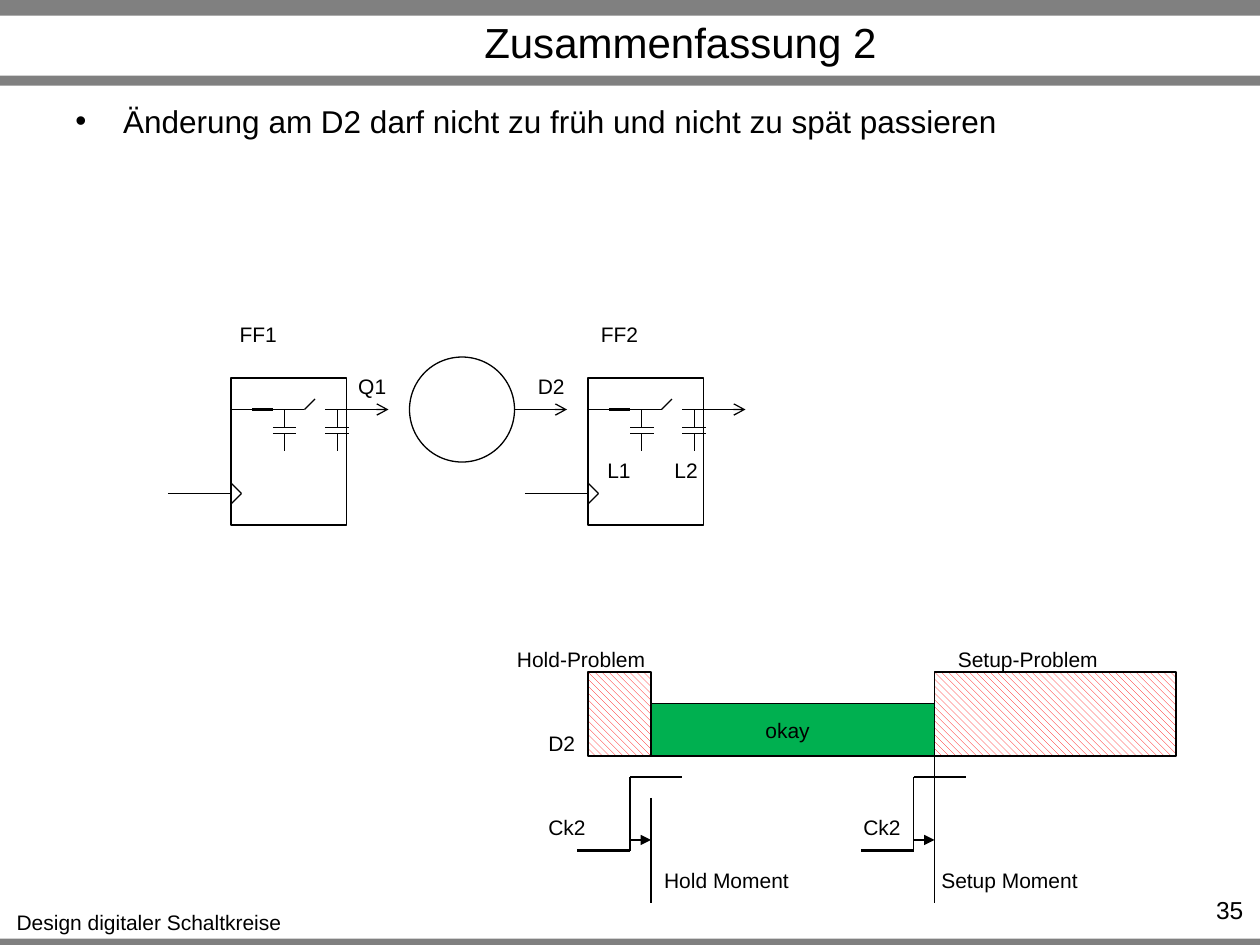
from dataclasses import dataclass
from typing import Optional

import pptx
import pptx.dml.color
import pptx.enum.dml
import pptx.enum.shapes
import pptx.enum.text
import pptx.oxml.ns
import pptx.util
from lxml import etree

RGBColor = pptx.dml.color.RGBColor
Shape = pptx.enum.shapes.MSO_SHAPE
Align = pptx.enum.text.PP_ALIGN
Anchor = pptx.enum.text.MSO_ANCHOR
qn = pptx.oxml.ns.qn

BLACK = RGBColor(0x00, 0x00, 0x00)
WHITE = RGBColor(0xFF, 0xFF, 0xFF)
GREY = RGBColor(0x80, 0x80, 0x80)
GREEN = RGBColor(0x00, 0xB0, 0x50)
RED = RGBColor(0xFF, 0x00, 0x00)
THIN, THICK = 0.75, 2

prs = pptx.Presentation()
prs.slide_width = pptx.util.Inches(10)
prs.slide_height = pptx.util.Inches(7.5)
s = prs.slides.add_slide(prs.slide_layouts[6])

# The slide is a grid of 120 columns by 90 rows with square cells
CELL = prs.slide_width / 120


@dataclass
class Box:
    col: float
    row: float
    cols: float
    rows: float

    def emu(self) -> list[int]:
        return [round(v * CELL) for v in (self.col, self.row, self.cols, self.rows)]


@dataclass
class Label:
    text: str
    col: float
    row: float
    cols: float


def add_line(x1: float, y1: float, x2: float, y2: float,
             width: float = THIN, head: Optional[str] = None) -> None:
    ends = [round(v * CELL) for v in (x1, y1, x2, y2)]
    c = s.shapes.add_connector(pptx.enum.shapes.MSO_CONNECTOR.STRAIGHT, *ends)
    c.line.color.rgb = BLACK
    c.line.width = pptx.util.Pt(width)
    if head:
        etree.SubElement(c.line._get_or_add_ln(), qn("a:tailEnd"), type=head)
    etree.SubElement(c._element.spPr, qn("a:effectLst"))


def add_block(box: Box, fill: Optional[RGBColor] = None, kind: Shape = Shape.RECTANGLE,
              outlined: bool = True, hatched: bool = False):
    sp = s.shapes.add_shape(kind, *box.emu())
    sp.shadow.inherit = False
    if hatched:
        sp.fill.patterned()
        sp.fill.pattern = pptx.enum.dml.MSO_PATTERN.WIDE_DOWNWARD_DIAGONAL
        sp.fill.fore_color.rgb = fill
        sp.fill.back_color.rgb = WHITE
    elif fill is not None:
        sp.fill.solid()
        sp.fill.fore_color.rgb = fill
    else:
        sp.fill.background()
    if outlined:
        sp.line.color.rgb = BLACK
        sp.line.width = pptx.util.Pt(THIN)
    else:
        sp.line.fill.background()
    return sp


def write(sp, text: str, size: float = 12, align: Align = Align.CENTER,
          anchor: Anchor = Anchor.TOP, wrap: bool = True):
    tf = sp.text_frame
    tf.text = text
    tf.word_wrap = wrap
    tf.vertical_anchor = anchor
    p = tf.paragraphs[0]
    p.alignment = align
    font = p.runs[0].font
    font.name, font.size, font.color.rgb = "Arial", pptx.util.Pt(size), BLACK
    return p


def add_text(box: Box, text: str, **style):
    return write(s.shapes.add_textbox(*box.emu()), text, **style)


def add_capacitor(x: float, y: float) -> None:
    """Capacitor hanging down from the wire at (x, y)."""
    add_line(x, y, x, y + 1.7)
    for plate in (y + 1.7, y + 2.3):
        add_line(x - 1.12, plate, x + 1.12, plate)
    add_line(x, y + 2.3, x, y + 4)


def add_flip_flop(x: float, y: float) -> None:
    """Flip-flop with clock input, resistor, switch and two capacitors."""
    add_block(Box(x, y, 11, 14))
    wire, clock = y + 3, y + 11
    add_line(x - 6, clock, x, clock)
    add_line(x, clock - 1, x + 1, clock)
    add_line(x + 1, clock, x, clock + 1)
    add_line(x, wire, x + 2, wire)
    add_line(x + 2, wire, x + 4, wire, THICK)
    add_line(x + 4, wire, x + 7, wire)
    add_line(x + 7, wire, x + 8, wire - 1)
    add_line(x + 9, wire, x + 10, wire)
    add_line(x + 10, wire, x + 15, wire, head="arrow")
    for offset in (5.12, 10.12):
        add_capacitor(x + offset, wire)


def add_clock_edge(x: float, moment: float, top: float) -> None:
    """Rising edge at column x with the delay to the moment marked."""
    add_line(x - 5, 81, x, 81, THICK)
    add_line(x, 81, x, 74)
    add_line(x, 74, x + 5, 74)
    add_line(moment, top, moment, 86)
    add_line(x, 80, moment, 80, head="triangle")


# Frame bars, footer and page number
for bar in (Box(0, 0, 120, 1.5), Box(0, 7.2, 120, 0.95), Box(0, 89.4, 120, 0.6)):
    add_block(bar, GREY, outlined=False)
add_text(Box(109.2, 84.7, 10.4, 2.9), "35", size=14, align=Align.RIGHT)

# Title and bullet
add_text(Box(15.6, 1.7, 98.4, 4.6), "Zusammenfassung 2", size=24, anchor=Anchor.MIDDLE)
p = add_text(Box(6, 9.1, 108, 14.9),
             "Änderung am D2 darf nicht zu früh und nicht zu spät passieren",
             size=18, align=Align.LEFT)
pPr = p._p.get_or_add_pPr()
indent = pptx.util.Inches(0.38)
pPr.set("marL", str(indent))
pPr.set("indent", str(-indent))
etree.SubElement(pPr, qn("a:buFont"), typeface="Arial")
etree.SubElement(pPr, qn("a:buChar"), char="•")

# Circuit: flip-flop, logic cloud, flip-flop
for col in (22, 56):
    add_flip_flop(col, 36)
add_block(Box(39, 34, 10, 10), kind=Shape.OVAL)
add_line(49, 39, 54, 39, head="arrow")

# Timing: allowed window between the hold and setup zones
okay = add_block(Box(61, 67, 28, 5), GREEN)
write(okay, "okay", anchor=Anchor.MIDDLE)
for zone in (Box(89, 64, 23, 8), Box(56, 64, 6, 8)):
    add_block(zone, RED, hatched=True)
add_clock_edge(60, moment=62, top=76)
add_clock_edge(87, moment=89, top=72)

# Labels
LABELS = [
    Label("Design digitaler Schaltkreise", 0.3, 86, 27.8),
    Label("FF1", 21.6, 30, 6),
    Label("FF2", 56, 30, 6),
    Label("Q1", 32.9, 35, 5.1),
    Label("D2", 50, 35, 5),
    Label("L1", 56.6, 43, 4.7),
    Label("L2", 63, 43, 4.7),
    Label("Hold-Problem", 48, 61, 14.7),
    Label("Setup-Problem", 90, 61, 15.8),
    Label("D2", 51, 69, 5),
    Label("Ck2", 51, 77, 6),
    Label("Ck2", 81, 77, 6),
    Label("Hold Moment", 62, 82, 14.4),
    Label("Setup Moment", 88.4, 82, 15.5),
]
for label in LABELS:
    add_text(Box(label.col, label.row, label.cols, 3.6), label.text, wrap=False)

prs.save("out.pptx")
